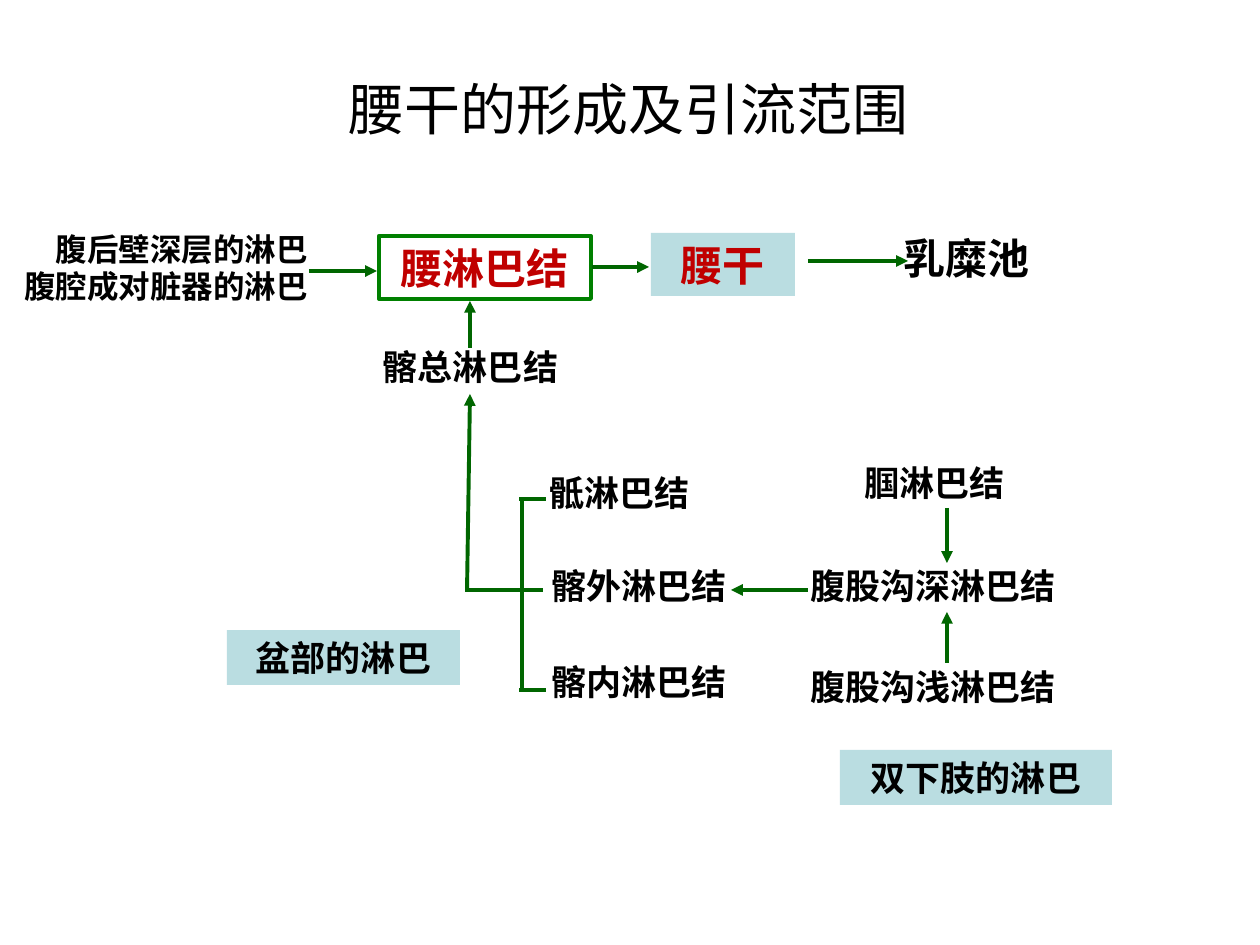
from lxml.etree import SubElement
from pptx import Presentation
from pptx.dml.color import RGBColor
from pptx.enum.shapes import MSO_CONNECTOR, MSO_SHAPE
from pptx.enum.text import MSO_ANCHOR, PP_ALIGN
from pptx.oxml.ns import qn
from pptx.util import Emu, Pt

BLACK = RGBColor(0x00, 0x00, 0x00)
RED = RGBColor(0xC0, 0x00, 0x00)
GREEN = RGBColor(0x00, 0x80, 0x00)
DARK_GREEN = RGBColor(0x00, 0x66, 0x00)
PALE_BLUE = RGBColor(0xBA, 0xDD, 0xE1)
CJK, LATIN = "Noto Sans CJK SC", "Arial"
LEFT, CENTER, RIGHT = PP_ALIGN.LEFT, PP_ALIGN.CENTER, PP_ALIGN.RIGHT

TITLE = ("腰干的形成及引流范围", (312, 68, 634, 81))

LABELS = [
    (["腹后壁深层的淋巴", "腹腔成对脏器的淋巴"], (-19, 223, 339, 89), 18, CJK, RIGHT),
    (["乳糜池"], (891, 226, 183, 63), 24, CJK, LEFT),
    (["髂总淋巴结"], (329, 339, 283, 55), 20, CJK, CENTER),
    (["骶淋巴结"], (537, 465, 197, 55), 20, LATIN, LEFT),
    (["髂外淋巴结"], (539, 558, 241, 55), 20, LATIN, LEFT),
    (["髂内淋巴结"], (539, 654, 233, 55), 20, LATIN, LEFT),
    (["腘淋巴结"], (852, 455, 246, 55), 20, CJK, LEFT),
    (["腹股沟深淋巴结"], (798, 558, 309, 55), 20, LATIN, LEFT),
    (["腹股沟浅淋巴结"], (798, 659, 290, 55), 20, LATIN, LEFT),
]

BOXES = [
    ("腰淋巴结", (379, 236, 212, 63), 24, CJK, RED, None, GREEN),
    ("腰干", (651, 233, 144, 63), 24, CJK, RED, PALE_BLUE, None),
    ("盆部的淋巴", (227, 630, 233, 55), 20, LATIN, BLACK, PALE_BLUE, None),
    ("双下肢的淋巴", (840, 750, 272, 55), 20, LATIN, BLACK, PALE_BLUE, None),
]

ARROWS = [
    (309, 271, 377, 271),
    (592, 267, 649, 267),
    (808, 261, 908, 261),
    (470, 348, 470, 301),
    (467, 592, 470, 394),
    (947, 508, 947, 563),
    (947, 663, 947, 612),
    (808, 590, 731, 590),
]

BRACKET = [
    (522, 690, 522, 498),
    (546, 499, 519, 499),
    (543, 590, 467, 590),
    (546, 690, 519, 690),
]


def px(lengths):
    return [Emu(round(length * 914400 / 126)) for length in lengths]


def write(frame, lines, size, face, color=BLACK, align=CENTER, bold=True):
    frame.word_wrap = True
    frame.vertical_anchor = MSO_ANCHOR.MIDDLE
    for index, line in enumerate(lines):
        paragraph = frame.paragraphs[0] if index == 0 else frame.add_paragraph()
        paragraph.alignment = align
        run = paragraph.add_run()
        run.text = line
        run.font.color.rgb = color
        for key, value in {"size": Pt(size), "bold": bold, "name": face}.items():
            setattr(run.font, key, value)
        SubElement(run.font._element, qn("a:ea"), typeface=CJK)


def add_box(slide, text, place, size, face, color, fill, outline):
    box = slide.shapes.add_shape(MSO_SHAPE.RECTANGLE, *px(place))
    box.shadow.inherit = False
    if fill is None:
        box.fill.background()
    else:
        box.fill.solid()
        box.fill.fore_color.rgb = fill
    if outline is None:
        box.line.fill.background()
    else:
        box.line.color.rgb = outline
        box.line.width = Pt(2.25)
    write(box.text_frame, [text], size, face, color)


def add_line(slide, ends, arrow):
    line = slide.shapes.add_connector(MSO_CONNECTOR.STRAIGHT, *px(ends))
    line.line.color.rgb = DARK_GREEN
    line.line.width = Pt(2.25)
    if arrow:
        SubElement(line.line._get_or_add_ln(), qn("a:tailEnd"), type="triangle")
    SubElement(line._element.spPr, qn("a:effectLst"))


def main():
    deck = Presentation()
    deck.slide_width, deck.slide_height = px((1260, 945))
    slide = deck.slides.add_slide(deck.slide_layouts[5])

    heading, place = TITLE
    title = slide.shapes.title
    title.left, title.top, title.width, title.height = px(place)
    write(title.text_frame, [heading], 32, CJK, bold=False)

    for text, place, size, face, color, fill, outline in BOXES:
        add_box(slide, text, place, size, face, color, fill, outline)
    for lines, place, size, face, align in LABELS:
        label = slide.shapes.add_textbox(*px(place))
        write(label.text_frame, lines, size, face, align=align)
    for ends in BRACKET:
        add_line(slide, ends, arrow=False)
    for ends in ARROWS:
        add_line(slide, ends, arrow=True)

    deck.save("out.pptx")


if __name__ == "__main__":
    main()
